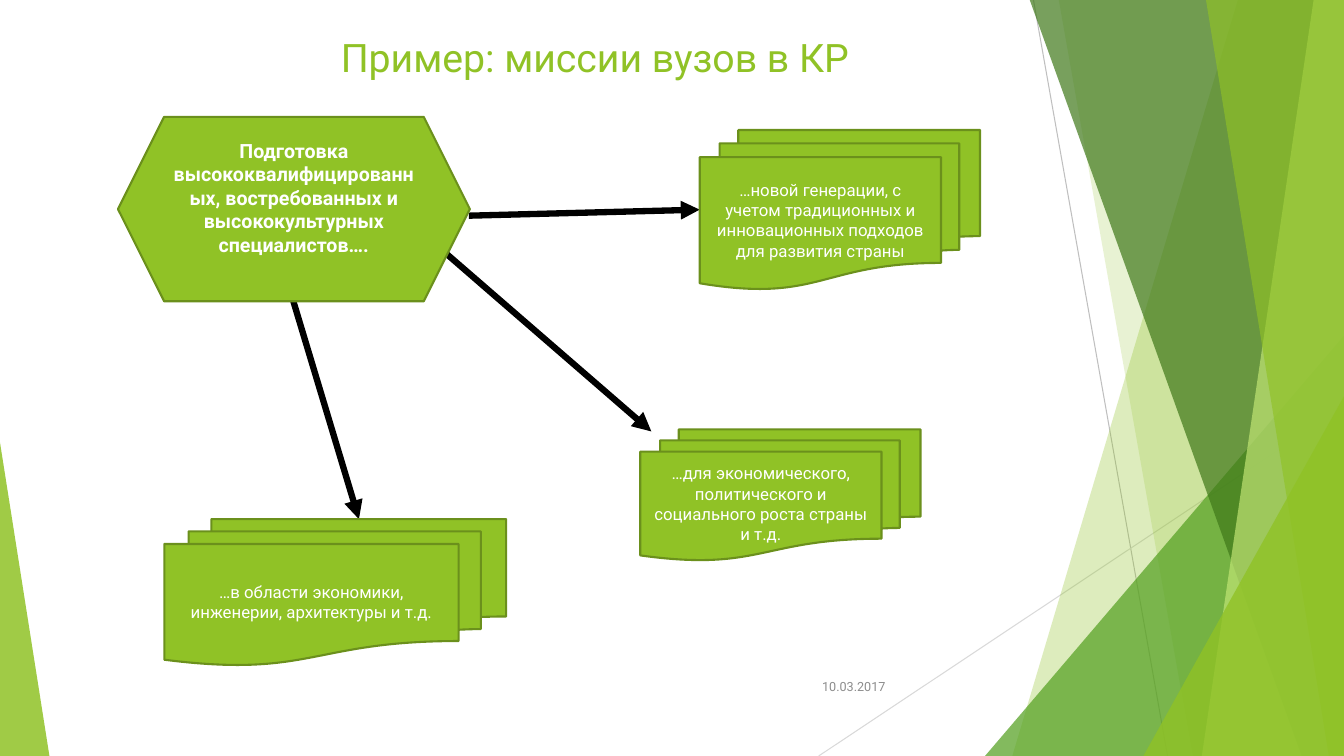
import pptx
import pptx.dml.color
import pptx.enum.shapes
import pptx.enum.text
import pptx.oxml
import pptx.oxml.ns
import pptx.util
from dataclasses import dataclass
from pptx.util import Inches

Shape = pptx.enum.shapes.MSO_SHAPE
Align = pptx.enum.text.PP_ALIGN
Anchor = pptx.enum.text.MSO_ANCHOR


@dataclass(frozen=True)
class Theme:
    font: str = "Roboto"
    green: str = "90C226"
    outline: str = "6B901C"
    leaf: str = "54A021"
    forest: str = "3F7819"
    lime: str = "C0E474"
    white: str = "FFFFFF"
    black: str = "000000"
    date_gray: str = "8C8C8C"
    dark_rule: str = "BFBFBF"
    light_rule: str = "D9D9D9"
    title_size: int = 28
    mission_size: int = 14
    detail_size: int = 12
    date_size: int = 9


theme = Theme()


def paint(shape, color, opacity=100, outline=None):
    """Fill a shape, with opacity in percent and an optional outline."""
    shape.shadow.inherit = False
    shape.fill.solid()
    shape.fill.fore_color.rgb = pptx.dml.color.RGBColor.from_string(color)
    if opacity < 100:
        color_node = shape.fill._xPr.find(".//" + pptx.oxml.ns.qn("a:srgbClr"))
        color_node.append(pptx.oxml.parse_xml(
            f'<a:alpha {pptx.oxml.ns.nsdecls("a")} val="{opacity * 1000}"/>'))
    if outline:
        shape.line.color.rgb = pptx.dml.color.RGBColor.from_string(outline)
        shape.line.width = pptx.util.Pt(1.5)
    else:
        shape.line.fill.background()


def write(box, text, size, color, align=Align.CENTER, anchor=Anchor.MIDDLE, bold=False):
    box.text_frame.word_wrap = True
    box.text_frame.vertical_anchor = anchor
    para = box.text_frame.paragraphs[0]
    para.alignment = align
    span = para.add_run()
    span.text = text
    font_format = {"name": theme.font, "size": pptx.util.Pt(size), "bold": bold}
    for name, value in font_format.items():
        setattr(span.font, name, value)
    span.font.color.rgb = pptx.dml.color.RGBColor.from_string(color)


deck = pptx.Presentation()
deck.slide_width, deck.slide_height = Inches(13.33), Inches(7.5)
page = deck.slides.add_slide(deck.slide_layouts[6])
shapes = page.shapes

# Lines: the two thin background rules, then the arrows
rules = [
    (10.25, 0, 11.58, 7.5, theme.dark_rule, 0.75, False),
    (13.33, 4.03, 8.12, 7.5, theme.light_rule, 0.75, False),
]
arrows = [
    (4.65, 2.14, 6.94, 2.08, theme.black, 4.5, True),
    (4.43, 2.52, 6.46, 4.28, theme.black, 4.5, True),
    (2.91, 2.99, 3.56, 5.15, theme.black, 4.5, True),
]
connectors = []
for x1, y1, x2, y2, color, width, has_head in rules + arrows:
    connector = shapes.add_connector(
        pptx.enum.shapes.MSO_CONNECTOR.STRAIGHT,
        Inches(x1), Inches(y1), Inches(x2), Inches(y2))
    connector.line.color.rgb = pptx.dml.color.RGBColor.from_string(color)
    connector.line.width = pptx.util.Pt(width)
    if has_head:
        connector.line._get_or_add_ln().append(pptx.oxml.parse_xml(
            f'<a:tailEnd {pptx.oxml.ns.nsdecls("a")} type="triangle"/>'))
    connector._element.spPr.append(pptx.oxml.parse_xml(
        f'<a:effectLst {pptx.oxml.ns.nsdecls("a")}/>'))

# Translucent facets: bands give top and bottom x of the left edge,
# triangles give left, top, width, height and apex position
facets = [
    ("band", (12.28, 10.04), theme.green, 30),
    ("band", (10.5, 11.83), theme.green, 20),
    ("triangle", (9.77, 3.33, 3.56, 4.17, 1), theme.leaf, 72),
    ("band", (10.21, 12.91), theme.forest, 70),
    ("band", (13.03, 11.92), theme.lime, 70),
    ("band", (11.96, 13.18), theme.green, 65),
    ("triangle", (11.34, 3.93, 1.99, 3.57, 1), theme.green, 80),
    ("triangle", (0, 4.39, 0.49, 3.11, 0), theme.green, 85),
]
for kind, geometry, color, opacity in facets:
    if kind == "band":
        top_x, bottom_x = geometry
        outline = shapes.build_freeform(Inches(top_x), Inches(-0.01))
        corners = [(13.33, -0.01), (13.33, 7.5), (bottom_x, 7.5)]
        outline.add_line_segments([(Inches(x), Inches(y)) for x, y in corners], close=True)
        facet = outline.convert_to_shape()
    else:
        *frame, apex = geometry
        facet = shapes.add_shape(Shape.ISOSCELES_TRIANGLE, *map(Inches, frame))
        facet.adjustments[0] = apex
    paint(facet, color, opacity)

# Title and date
title = shapes.add_textbox(Inches(1.8), Inches(0.28), Inches(8.2), Inches(0.85))
write(title, "Пример: миссии вузов в КР", theme.title_size, theme.green, anchor=Anchor.TOP)
date = shapes.add_textbox(Inches(7.88), Inches(6.61), Inches(1), Inches(0.4))
write(date, "10.03.2017", theme.date_size, theme.date_gray, align=Align.RIGHT)

# Mission and the ways universities continue it
details = [
    (1.63, 5.15, 3.39, 1.45, "…в области экономики, инженерии, архитектуры и т.д."),
    (6.94, 1.29, 2.78, 1.58,
     "…новой генерации, с учетом традиционных и инновационных подходов для развития страны"),
    (6.35, 4.26, 2.78, 1.3,
     "…для экономического, политического и социального роста страны и т.д."),
]
for *frame, text in details:
    document = shapes.add_shape(Shape.FLOWCHART_MULTIDOCUMENT, *map(Inches, frame))
    paint(document, theme.green, outline=theme.outline)
    write(document, text, theme.detail_size, theme.white)

mission = shapes.add_shape(
    Shape.HEXAGON, Inches(1.17), Inches(1.16), Inches(3.49), Inches(1.83))
paint(mission, theme.green, outline=theme.outline)
mission.text_frame.margin_bottom = Inches(0.28)
write(mission,
      "Подготовка высококвалифицированных, востребованных и высококультурных специалистов….",
      theme.mission_size, theme.white, bold=True)

deck.save("out.pptx")
